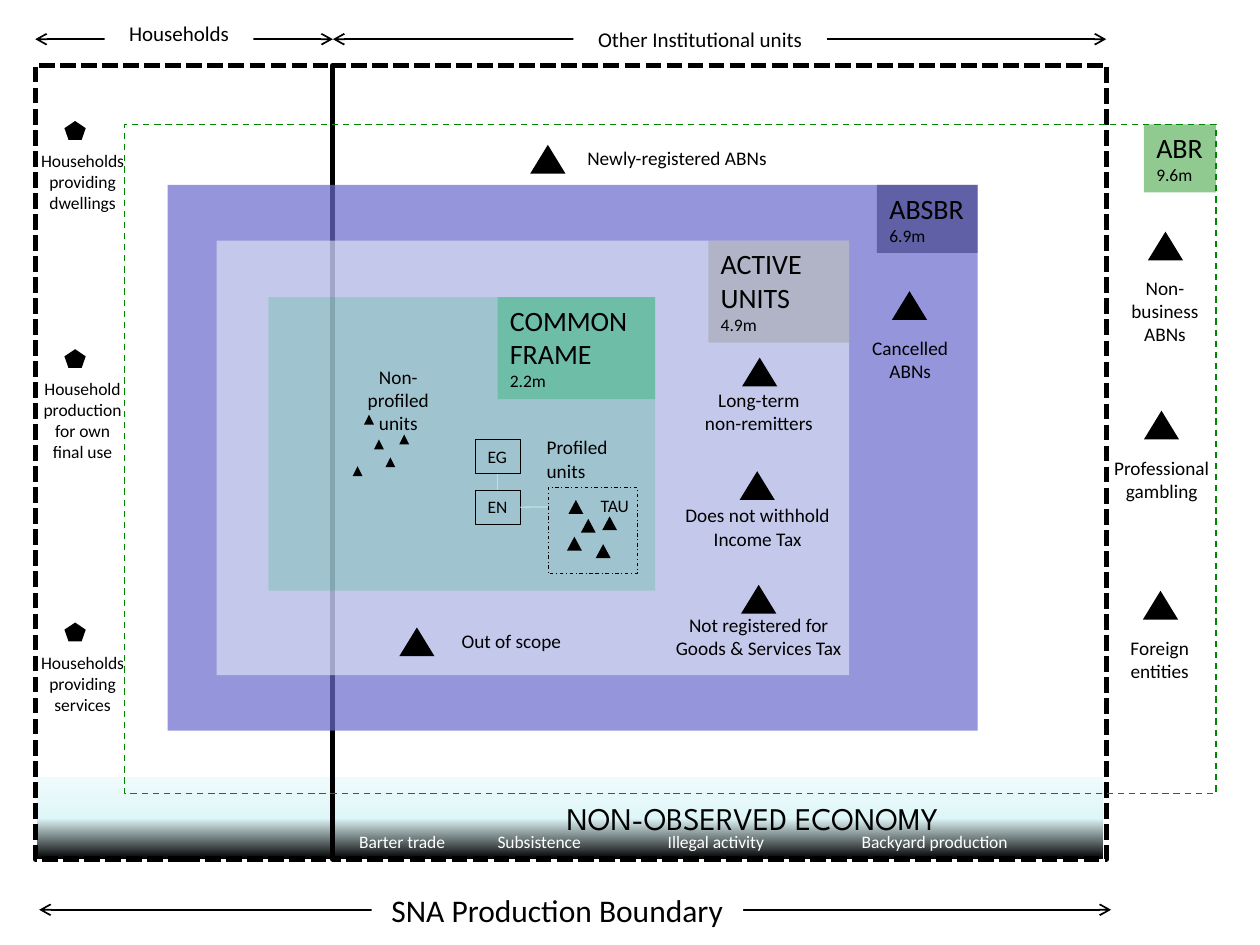
from copy import deepcopy

from pptx import Presentation
from pptx.dml.color import RGBColor
from pptx.enum.dml import MSO_LINE
from pptx.enum.shapes import MSO_CONNECTOR, MSO_SHAPE
from pptx.enum.text import MSO_ANCHOR, PP_ALIGN
from pptx.oxml.ns import qn
from pptx.util import Cm, Pt

RECT = MSO_SHAPE.RECTANGLE
TRI = MSO_SHAPE.ISOSCELES_TRIANGLE
PENTA = MSO_SHAPE.REGULAR_PENTAGON
STRAIGHT = MSO_CONNECTOR.STRAIGHT
DOTS, DASH, MIXED = MSO_LINE.SQUARE_DOT, MSO_LINE.DASH, MSO_LINE.DASH_DOT
LEFT, MID = PP_ALIGN.LEFT, PP_ALIGN.CENTER
TOP, CENTRE = MSO_ANCHOR.TOP, MSO_ANCHOR.MIDDLE
BLACK, WHITE, GREEN = "000000", "FFFFFF", "008600"


def paint(text):
    return RGBColor.from_string(text)


class Canvas:
    """Holds the style and the current slide; all lengths are in cm."""

    font = "Calibri"

    def __init__(self, slide):
        self.slide = slide
        self.shapes = slide.shapes

    def shape(self, x, y, w, h, kind=RECT, fill=None, alpha=None,
              line=None, width=1, dash=None):
        item = self.shapes.add_shape(kind, Cm(x), Cm(y), Cm(w), Cm(h))
        item.shadow.inherit = False
        if fill:
            item.fill.solid()
            item.fill.fore_color.rgb = paint(fill)
            if alpha:
                tone = item._element.spPr.find(qn("a:solidFill"))[0]
                node = tone.makeelement(qn("a:alpha"), {"val": str(alpha * 1000)})
                tone.append(node)
        else:
            item.fill.background()
        if line:
            item.line.color.rgb = paint(line)
            item.line.width = Pt(width)
            if dash:
                item.line.dash_style = dash
        else:
            item.line.fill.background()
        return item

    def label(self, item, lines, sizes, color=BLACK, align=MID, anchor=TOP,
              wrap=False, font=None):
        """Fill a shape with one paragraph per line; sizes is one size or a list."""
        frame = item.text_frame
        frame.word_wrap = wrap
        frame.vertical_anchor = anchor
        frame.text = "\n".join(lines)
        if not isinstance(sizes, list):
            sizes = [sizes] * len(lines)
        for par, size in zip(frame.paragraphs, sizes):
            par.alignment = align
            par.font.name = font or self.font
            par.font.size = Pt(size)
            par.font.color.rgb = paint(color)

    def text(self, x, y, w, h, lines, size, **style):
        box = self.shapes.add_textbox(Cm(x), Cm(y), Cm(w), Cm(h))
        self.label(box, lines, size, **style)

    def line(self, x1, y1, x2, y2, color=BLACK, width=1, arrows=False):
        item = self.shapes.add_connector(STRAIGHT, Cm(x1), Cm(y1), Cm(x2), Cm(y2))
        item.line.color.rgb = paint(color)
        item.line.width = Pt(width)
        props = item._element.spPr
        if arrows:
            edge = props.find(qn("a:ln"))
            for tag in ("a:headEnd", "a:tailEnd"):
                edge.append(edge.makeelement(qn(tag), {"type": "arrow"}))
        props.append(props.makeelement(qn("a:effectLst"), {}))
        return item

    def span(self, x1, x2, y, title, size, box):
        """Double arrow broken by a title on white."""
        self.line(x1, y, x2, y, arrows=True)
        self.label(self.shape(*box, fill=WHITE), [title], size, wrap=True)

    def frame(self, x, y, w, h, lines, tag, shade, **style):
        """Population box with a tag in its top right corner."""
        self.shape(x, y, w, h, **style)
        wide, high = tag
        color, alpha = shade
        corner = self.shape(x + w - wide, y, wide, high, fill=color, alpha=alpha)
        self.label(corner, lines, [16] * (len(lines) - 1) + [10], align=LEFT)

    def house(self, y, lines, high):
        self.shape(1.3, y, 0.43, 0.38, PENTA, fill=BLACK)
        self.text(0.56, y + 0.46, 2.21, high, lines, 10)

    def unit(self, x, y, left, top, wide, lines):
        """Large triangle with its label."""
        self.shape(x, y, 0.71, 0.58, TRI, fill=BLACK)
        self.text(left, top, wide, 0.27 + 0.47 * len(lines), lines, 11)

    def swarm(self, spots, w, h):
        for x, y in spots:
            self.shape(x, y, w, h, TRI, fill=BLACK)

    def fade(self, x, y, w, h, stops):
        """Band shaded from bottom to top through (percent, colour) stops."""
        band = self.shape(x, y, w, h)
        band.fill.gradient()
        band.fill.gradient_angle = 90
        group = band._element.spPr.find(qn("a:gradFill")).find(qn("a:gsLst"))
        group.append(deepcopy(group[-1]))
        for stop, (place, color) in zip(band.fill.gradient_stops, stops):
            stop.position = place / 100
            stop.color.rgb = paint(color)
        return band


def main():
    deck = Presentation()
    deck.slide_width, deck.slide_height = Cm(25.4), Cm(19.05)
    art = Canvas(deck.slides.add_slide(deck.slide_layouts[6]))

    band = art.fade(0.74, 15.67, 21.49, 1.65,
                    [(0, BLACK), (50, "DFF6F8"), (100, "EFFAFB")])
    art.label(band, ["NON-OBSERVED ECONOMY"], 18, anchor=CENTRE, wrap=True,
              font="League Spartan")
    band.text_frame.margin_left = Cm(7.62)

    for x, wide in [(0.71, 6), (6.71, 15.6)]:
        art.shape(x, 1.32, wide, 16, line=BLACK, width=3, dash=DOTS)
    art.span(0.71, 6.71, 0.79, "Households", 12, (2.11, 0.28, 3, 0.76))
    art.span(0.79, 22.4, 18.34, "SNA Production Boundary", 18,
             (7.49, 17.83, 7.49, 1.02))
    art.span(6.71, 22.3, 0.79, "Other Institutional units", 12,
             (11.56, 0.41, 5.11, 0.76))

    art.frame(2.51, 2.51, 22, 13.49, ["ABR", "9.6m"], (1.45, 1.37),
              (GREEN, 43), line=GREEN, width=0.9, dash=DASH)
    art.frame(3.38, 3.73, 16.33, 11, ["ABSBR", "6.9m"], (2.03, 1.37),
              ("222267", 46), fill="6B6BCF", alpha=71)
    art.frame(4.37, 4.85, 12.75, 8.76, ["ACTIVE", "UNITS", "4.9m"],
              (2.84, 2.06), ("999999", 43), fill="F1F9F9", alpha=52)
    art.frame(5.41, 5.99, 7.8, 5.92, ["COMMON", "FRAME", "2.2m"],
              (3.18, 2.06), ("00B050", 31), fill="00B050", alpha=18)

    for x, wide, trade in [
        (6.99, 2.29, "Barter trade"),
        (9.78, 2.24, "Subsistence"),
        (13.21, 2.49, "Illegal activity"),
        (17.12, 3.51, "Backyard production"),
    ]:
        art.text(x, 16.62, wide, 0.69, [trade], 10, color=WHITE, align=LEFT)

    art.house(2.44, ["Households", "providing", "dwellings"], 1.55)
    art.house(7.04, ["Household", "production", "for own", "final use"], 1.96)
    art.house(12.55, ["Households", "providing", "services"], 1.55)

    for unit in [
        (23.14, 4.67, 22.53, 5.44, 1.91, ["Non-", "business", "ABNs"]),
        (23.06, 8.28, 22.2, 9.07, 2.44, ["Professional", "gambling"]),
        (23.04, 11.91, 22.53, 12.7, 1.7, ["Foreign", "entities"]),
        (10.69, 2.92, 11.48, 2.82, 4.34, ["Newly-registered ABNs"]),
        (17.98, 5.87, 17.32, 6.65, 2.06, ["Cancelled", "ABNs"]),
        (14.96, 7.21, 13.94, 7.7, 2.72, ["Long-term", "non-remitters"]),
        (14.91, 9.5, 13.51, 10.03, 3.53, ["Does not withhold", "Income Tax"]),
        (8.05, 12.65, 9.04, 12.57, 2.54, ["Out of scope"]),
        (14.94, 11.79, 13.34, 12.24, 3.91,
         ["Not registered for", "Goods & Services Tax"]),
    ]:
        art.unit(*unit)

    art.text(7.14, 7.24, 1.78, 0.81, ["Non-profiled", "units"], 11, wrap=True)
    art.swarm([(7.34, 8.36), (7.54, 8.86), (7.77, 9.22), (8.05, 8.76),
               (7.11, 9.4)], 0.2, 0.2)

    group, entity = [art.shape(9.58, y, 0.91, 0.69, line=BLACK, width=0.25)
                     for y in (8.86, 9.88)]
    art.label(group, ["EG"], 10, align=LEFT)
    art.label(entity, ["EN"], 10, align=LEFT)
    art.swarm([(11.46, 10.08), (11.71, 10.46), (12.01, 10.97), (12.14, 10.41),
               (11.43, 10.82)], 0.3, 0.28)
    art.shape(11.05, 9.83, 1.8, 1.73, line=BLACK, width=0.5, dash=MIXED)
    art.text(11.86, 9.86, 1.12, 0.69, ["TAU"], 10, align=LEFT)
    down = art.line(10.03, 9.55, 10.03, 9.88, "BBE0E3", 0.75)
    down.begin_connect(group, 2)
    down.end_connect(entity, 0)
    across = art.line(10.49, 10.22, 11.05, 10.22, "BBE0E3", 0.75)
    across.begin_connect(entity, 3)
    art.text(10.77, 8.66, 1.75, 1.19, ["Profiled", "units"], 11, align=LEFT)

    deck.save("out.pptx")


if __name__ == "__main__":
    main()
